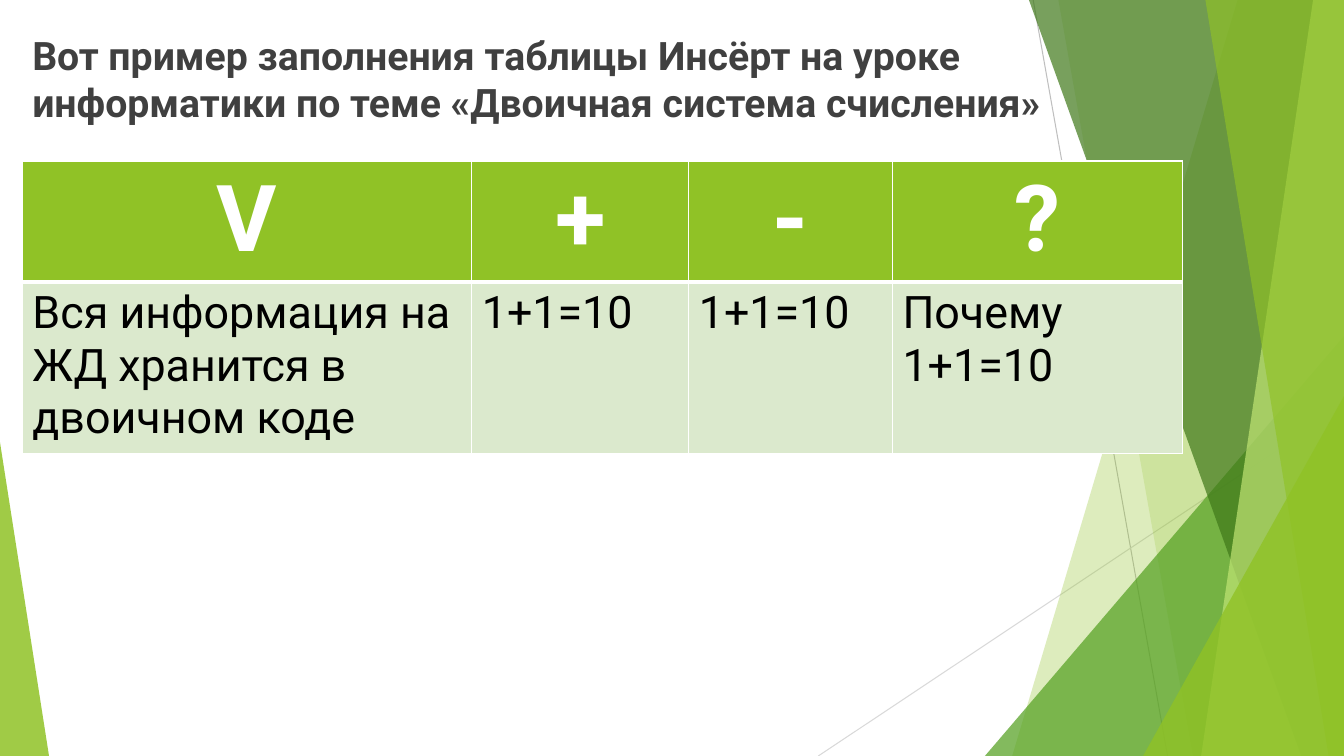
from lxml.etree import SubElement
from pptx import Presentation
from pptx.dml.color import RGBColor
from pptx.enum.shapes import MSO_CONNECTOR, MSO_SHAPE
from pptx.enum.text import MSO_ANCHOR, PP_ALIGN
from pptx.oxml.ns import qn
from pptx.util import Pt

WIDTH, HEIGHT = 960, 540
FONT = "Roboto"
GREEN = "90C226"
WHITE = "FFFFFF"
PALE_GREEN = "DBE9CD"

TITLE = ("Вот пример заполнения таблицы Инсёрт на уроке "
         "информатики по теме «Двоичная система счисления»")
HEADINGS = ["V", "+", "-", "?"]
ANSWERS = ["Вся информация на ЖД хранится в двоичном коде",
           "1+1=10", "1+1=10", "Почему 1+1=10"]
COLUMN_WIDTHS = [321, 155, 145.5, 207]
ROW_HEIGHTS = [84, 120]

RAYS = [((738, 0), (834, 540), "BFBFBF"),
        ((960, 290), (584.5, 540), "D9D9D9")]
BACK_BANDS = [(884, 723, GREEN, 30), (756, 852, GREEN, 20)]
FRONT_BANDS = [(735, 929.5, "3F7819", 70), (938, 858, "C0E474", 70),
               (861, 949, GREEN, 65)]


def rgb(color):
    return RGBColor.from_string(color)


def fill_shape(shape, color, opacity):
    shape.shadow.inherit = False
    shape.fill.solid()
    shape.fill.fore_color.rgb = rgb(color)
    shape.line.fill.background()
    color_element = shape.fill._xPr.find(".//" + qn("a:srgbClr"))
    SubElement(color_element, qn("a:alpha"), val=str(opacity * 1000))


def add_ray(slide, start, end, color):
    points = [Pt(value) for value in (*start, *end)]
    ray = slide.shapes.add_connector(MSO_CONNECTOR.STRAIGHT, *points)
    ray.line.color.rgb = rgb(color)
    ray.line.width = Pt(0.75)
    SubElement(ray._element.spPr, qn("a:effectLst"))


def add_band(slide, top_x, bottom_x, color, opacity):
    corners = [(WIDTH, 0), (WIDTH, HEIGHT), (bottom_x, HEIGHT)]
    builder = slide.shapes.build_freeform(Pt(top_x), Pt(0))
    builder.add_line_segments([(Pt(x), Pt(y)) for x, y in corners])
    fill_shape(builder.convert_to_shape(), color, opacity)


def add_triangle(slide, left, top, width, apex, color, opacity):
    triangle = slide.shapes.add_shape(
        MSO_SHAPE.ISOSCELES_TRIANGLE,
        Pt(left), Pt(top), Pt(width), Pt(HEIGHT - top))
    triangle.adjustments[0] = apex
    fill_shape(triangle, color, opacity)


def write_text(frame, text, size, color, bold=False, align=PP_ALIGN.LEFT):
    frame.word_wrap = True
    paragraph = frame.paragraphs[0]
    paragraph.alignment = align
    run = paragraph.add_run()
    run.text = text
    run.font.name = FONT
    run.font.size = Pt(size)
    run.font.bold = bold
    run.font.color.rgb = rgb(color)


def add_title(slide):
    box = slide.shapes.add_textbox(Pt(16), Pt(19), Pt(828), Pt(74))
    write_text(box.text_frame, TITLE, 28, "404040", bold=True)


def set_borders(cell, **widths):
    properties = cell._tc.get_or_add_tcPr()
    for index, side in enumerate("LRTB"):
        line = properties.makeelement(
            qn(f"a:ln{side}"), {"w": str(Pt(widths.get(side, 1)))})
        solid = SubElement(line, qn("a:solidFill"))
        SubElement(solid, qn("a:srgbClr"), val=WHITE)
        properties.insert(index, line)


def fill_cell(cell, color):
    cell.fill.solid()
    cell.fill.fore_color.rgb = rgb(color)
    cell.vertical_anchor = MSO_ANCHOR.TOP


def add_insert_table(slide):
    table = slide.shapes.add_table(
        2, len(HEADINGS), Pt(16), Pt(115),
        Pt(sum(COLUMN_WIDTHS)), Pt(sum(ROW_HEIGHTS))).table
    for column, width in zip(table.columns, COLUMN_WIDTHS):
        column.width = Pt(width)
    for row, height in zip(table.rows, ROW_HEIGHTS):
        row.height = Pt(height)
    for index, (heading, answer) in enumerate(zip(HEADINGS, ANSWERS)):
        top, bottom = table.cell(0, index), table.cell(1, index)
        fill_cell(top, GREEN)
        set_borders(top, B=3)
        write_text(top.text_frame, heading, 66, WHITE, bold=True,
                   align=PP_ALIGN.CENTER)
        fill_cell(bottom, PALE_GREEN)
        set_borders(bottom, T=3)
        write_text(bottom.text_frame, answer, 32, "000000")


def add_decoration(slide):
    for ray in RAYS:
        add_ray(slide, *ray)
    for band in BACK_BANDS:
        add_band(slide, *band)
    add_triangle(slide, 703.5, 240, 256.5, 1, "54A021", 72)
    for band in FRONT_BANDS:
        add_band(slide, *band)
    add_triangle(slide, 816.5, 283, 143.5, 1, GREEN, 80)
    add_triangle(slide, 0, 316, 35, 0, GREEN, 85)


def main():
    presentation = Presentation()
    presentation.slide_width = Pt(WIDTH)
    presentation.slide_height = Pt(HEIGHT)
    slide = presentation.slides.add_slide(presentation.slide_layouts[6])
    add_decoration(slide)
    add_title(slide)
    add_insert_table(slide)
    presentation.save("out.pptx")


if __name__ == "__main__":
    main()
